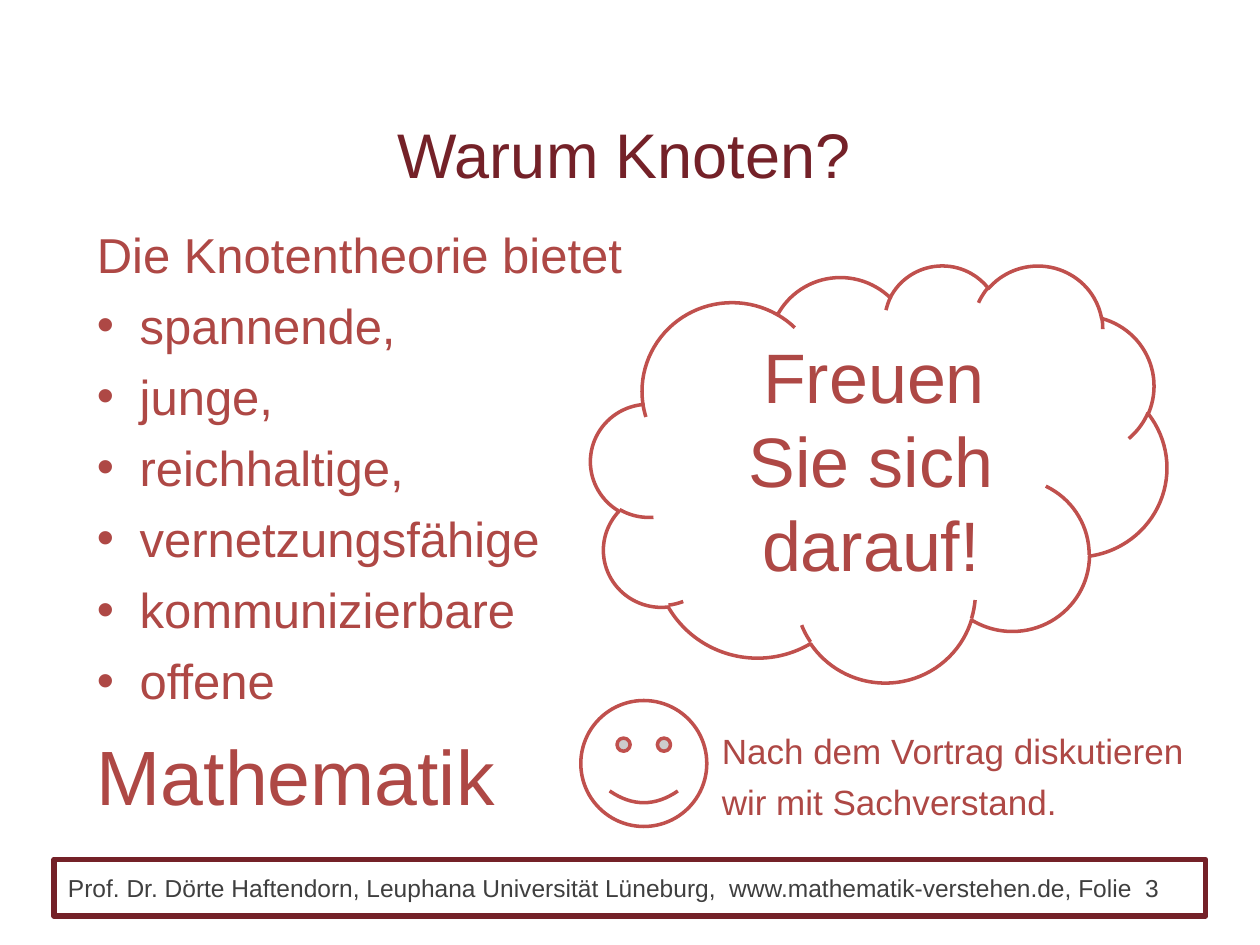
from dataclasses import dataclass

import pptx
import pptx.dml.color
import pptx.enum.shapes
import pptx.enum.text
import pptx.util
from lxml import etree

Inches = pptx.util.Inches
Pt = pptx.util.Pt
Align = pptx.enum.text.PP_ALIGN
Anchor = pptx.enum.text.MSO_ANCHOR
Preset = pptx.enum.shapes.MSO_SHAPE

DARK_RED = "742128"
TEXT_RED = "AE4845"
OUTLINE_RED = "C0504D"
GREY = "3F3F3F"
WHITE = "FFFFFF"


@dataclass
class Box:
    left: float
    top: float
    width: float
    height: float

    def lengths(self) -> list:
        return [Inches(v) for v in (self.left, self.top, self.width, self.height)]


@dataclass
class Line:
    text: str
    size: float
    color: str = TEXT_RED
    align: Align = Align.LEFT
    before: float = 0
    bullet: bool = False
    margin: float = 0
    indent: float = 0


def rgb(color: str):
    return pptx.dml.color.RGBColor.from_string(color)


def write(shape, lines: list[Line], insets=(0.1, 0.05, 0.1, 0.05),
          anchor=Anchor.TOP, wrap: bool = True) -> None:
    frame = shape.text_frame
    frame.word_wrap = wrap
    frame.vertical_anchor = anchor
    (frame.margin_left, frame.margin_top,
     frame.margin_right, frame.margin_bottom) = [Inches(v) for v in insets]
    for index, line in enumerate(lines):
        paragraph = frame.add_paragraph() if index else frame.paragraphs[0]
        paragraph.text = line.text
        paragraph.alignment = line.align
        paragraph.space_before = Pt(line.before)
        properties = paragraph._p.get_or_add_pPr()
        properties.set("marL", str(Inches(line.margin)))
        properties.set("indent", str(Inches(line.indent)))
        if line.bullet:
            namespace = properties.nsmap["a"]
            etree.SubElement(properties, f"{{{namespace}}}buFont", typeface="Arial")
            etree.SubElement(properties, f"{{{namespace}}}buChar", char="•")
        for run in paragraph.runs:
            run.font.name = "Arial"
            run.font.size = Pt(line.size)
            run.font.color.rgb = rgb(line.color)


def add_text(slide, box: Box, lines: list[Line], top_inset: float,
             wrap: bool = True) -> None:
    textbox = slide.shapes.add_textbox(*box.lengths())
    write(textbox, lines, insets=(0.1, top_inset, 0.1, 0.05), wrap=wrap)


def add_outlined(slide, preset, box: Box, color: str, width: float,
                 filled: bool = True):
    shape = slide.shapes.add_shape(preset, *box.lengths())
    shape.shadow.inherit = False
    if filled:
        shape.fill.solid()
        shape.fill.fore_color.rgb = rgb(WHITE)
    else:
        shape.fill.background()
    shape.line.color.rgb = rgb(color)
    shape.line.width = Pt(width)
    return shape


def main() -> None:
    presentation = pptx.Presentation()
    presentation.slide_width = Inches(10)
    presentation.slide_height = Inches(7.5)
    slide = presentation.slides.add_slide(presentation.slide_layouts[6])

    footer = add_outlined(slide, Preset.RECTANGLE, Box(0.43, 6.82, 9.14, 0.45),
                          DARK_RED, 3, filled=False)
    write(footer, [Line("Prof. Dr. Dörte Haftendorn, Leuphana Universität Lüneburg,  "
                        "www.mathematik-verstehen.de, Folie  3", 14, GREY)],
          insets=(0.11, 0, 0, 0), anchor=Anchor.MIDDLE)

    add_text(slide, Box(1.53, 0.84, 6.85, 0.71),
             [Line("Warum Knoten?", 36, DARK_RED, Align.CENTER)], 0.08)

    qualities = ["spannende,", "junge,", "reichhaltige,", "vernetzungsfähige",
                 "kommunizierbare", "offene"]
    reasons = [Line("Die Knotentheorie bietet", 28)]
    reasons += [Line(quality, 28, before=7, bullet=True, margin=0.34, indent=-0.34)
                for quality in qualities]
    reasons.append(Line("Mathematik", 44, before=11))
    add_text(slide, Box(0.67, 1.7, 8.11, 4.85), reasons, 0.08)

    cloud = add_outlined(slide, Preset.CLOUD, Box(4.69, 2.1, 4.57, 3.31), OUTLINE_RED, 2)
    write(cloud, [Line("Freuen Sie sich darauf!", 40, align=Align.CENTER,
                       margin=0.2, indent=0.05)])

    add_outlined(slide, Preset.SMILEY_FACE, Box(4.61, 5.56, 1, 1), OUTLINE_RED, 2)
    add_text(slide, Box(5.63, 5.72, 3.89, 0.84),
             [Line("Nach dem Vortrag diskutieren", 20),
              Line("wir mit Sachverstand.", 20, before=5)], 0.07, wrap=False)

    presentation.save("out.pptx")


if __name__ == "__main__":
    main()
